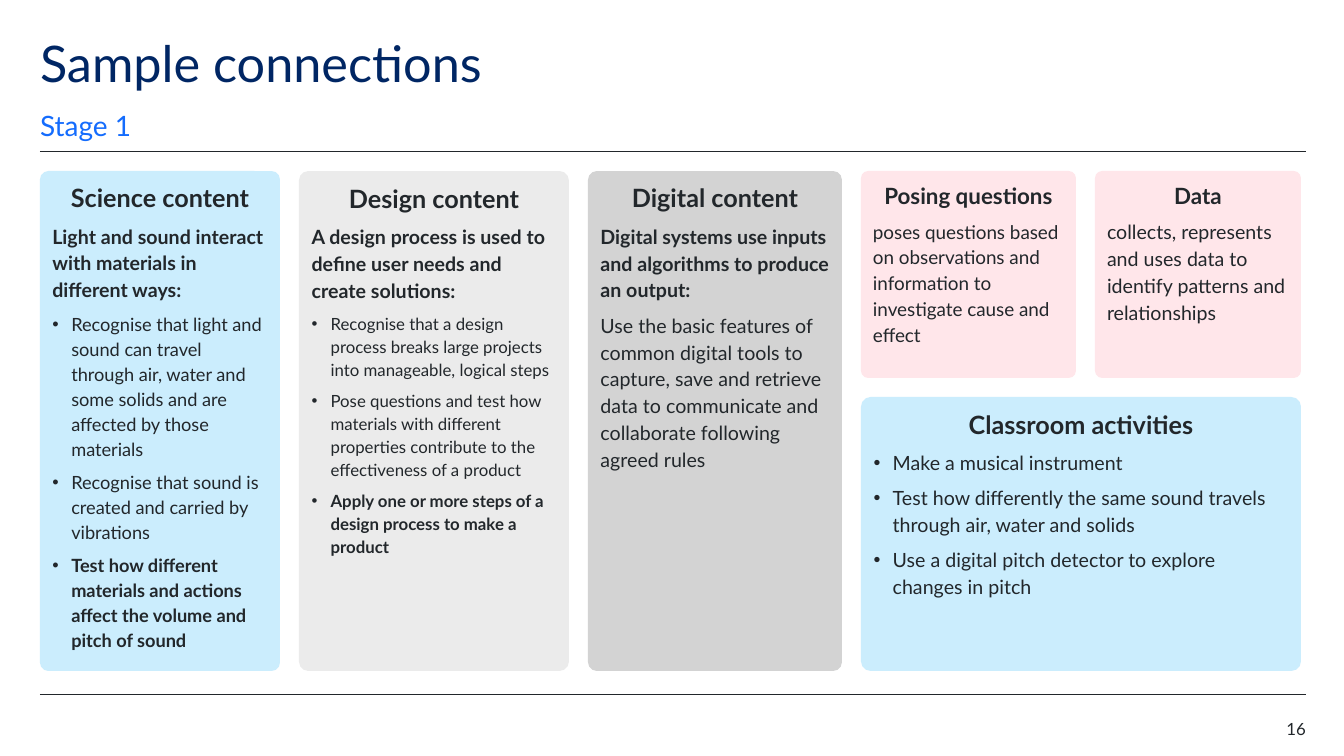
from lxml import etree
from pptx import Presentation
from pptx import util as u
from pptx.dml.color import RGBColor
from pptx.enum import shapes, text
from pptx.oxml.ns import qn

COLOURS = {"navy": "002664", "blue": "146CFD", "ink": "22272B", "sky": "CBEDFD",
           "mist": "EBEBEB", "grey": "D3D3D3", "blush": "FFE6EA"}
FONT = "Lato"
LEFT, RIGHT, TOP, BOTTOM, GAP = 40, 1306, 171, 671, 19
BULLET_INDENT = 19

SCIENCE = [
    ("head", "Science content", 18, True),
    ("plain", "Light and sound interact with materials in different ways:", 14, True),
    ("bullet", "Recognise that light and sound can travel through air, water and "
               "some solids and are affected by those materials", 13, False),
    ("bullet", "Recognise that sound is created and carried by vibrations", 13, False),
    ("bullet", "Test how different materials and actions affect the volume and "
               "pitch of sound", 13, True),
]
DESIGN = [
    ("head", "Design content", 18, True),
    ("plain", "A design process is used to define user needs and create solutions:", 14, True),
    ("bullet", "Recognise that a design process breaks large projects into "
               "manageable, logical steps", 12, False),
    ("bullet", "Pose questions and test how materials with different properties "
               "contribute to the effectiveness of a product", 12, False),
    ("bullet", "Apply one or more steps of a design process to make a product", 12, True),
]
DIGITAL = [
    ("head", "Digital content", 18, True),
    ("plain", "Digital systems use inputs and algorithms to produce an output:", 14, True),
    ("plain", "Use the basic features of common digital tools to capture, save and "
              "retrieve data to communicate and collaborate following agreed rules", 14, False),
]
POSING = [
    ("head", "Posing questions", 16, True),
    ("plain", "poses questions based on observations and information to "
              "investigate cause and effect", 13.5, False),
]
DATA = [
    ("head", "Data", 16, True),
    ("plain", "collects, represents and uses data to identify patterns and "
              "relationships", 14, False),
]
ACTIVITIES = [
    ("head", "Classroom activities", 18, True),
    ("bullet", "Make a musical instrument", 14, False),
    ("bullet", "Test how differently the same sound travels through air, water "
               "and solids", 14, False),
    ("bullet", "Use a digital pitch detector to explore changes in pitch", 14, False),
]


def px(length):
    """Turn pixels into EMU."""
    return u.Emu(round(length * 914400 / 100.8))


def colour(name):
    """Look up a named colour."""
    return RGBColor.from_string(COLOURS[name])


def set_bullet(paragraph, character=None):
    """Give a paragraph a hanging bullet, or none."""
    properties = paragraph._p.get_or_add_pPr()
    indent = px(BULLET_INDENT) if character else 0
    properties.set("marL", str(indent))
    properties.set("indent", str(-indent))
    if character:
        etree.SubElement(properties, qn("a:buFont")).set("typeface", "Arial")
        etree.SubElement(properties, qn("a:buChar")).set("char", character)
    else:
        etree.SubElement(properties, qn("a:buNone"))


def format_paragraph(paragraph, size, tone="ink", bold=False, spacing=1.0, after=0,
                     align=text.PP_ALIGN.LEFT):
    """Set the font and spacing of a paragraph."""
    paragraph.alignment = align
    paragraph.line_spacing = spacing
    paragraph.space_before = u.Pt(0)
    paragraph.space_after = u.Pt(after)
    font = paragraph.font
    font.name, font.size, font.bold = FONT, u.Pt(size), bold
    font.color.rgb = colour(tone)


def fill_label(shape, box, words, anchor=text.MSO_ANCHOR.TOP):
    """Place a one-line text shape without margins and return its paragraph."""
    shape.left, shape.top, shape.width, shape.height = map(px, box)
    frame = shape.text_frame
    frame.margin_left = frame.margin_right = frame.margin_top = frame.margin_bottom = 0
    frame.auto_size = text.MSO_AUTO_SIZE.NONE
    frame.word_wrap = True
    frame.vertical_anchor = anchor
    frame.text = words
    return frame.paragraphs[0]


def add_rule(page, y):
    """Draw a thin line across the content width."""
    line = page.shapes.add_connector(shapes.MSO_CONNECTOR.STRAIGHT,
                                     px(LEFT), px(y), px(RIGHT), px(y))
    line.line.color.rgb = colour("ink")
    line.line.width = u.Pt(0.5)
    etree.SubElement(line._element.spPr, qn("a:effectLst"))


def add_header(page, left, top, width):
    """Fill the title and subtitle placeholders."""
    title = fill_label(page.shapes.title, (left, top, width, 60), "Sample connections")
    format_paragraph(title, 36, "navy", spacing=0.9)
    stage = fill_label(page.placeholders[1], (left, top + 69, width, 34), "Stage 1",
                       text.MSO_ANCHOR.BOTTOM)
    set_bullet(stage)
    format_paragraph(stage, 20, "blue", spacing=1.5, after=12)


def add_card(page, left, top, width, height, tone, rows):
    """Draw a rounded card with a heading, text and bullets."""
    card = page.shapes.add_shape(shapes.MSO_SHAPE.ROUNDED_RECTANGLE,
                                 *map(px, (left, top, width, height)))
    card.adjustments[0] = 0.035
    card.shadow.inherit = False
    card.fill.solid()
    card.fill.fore_color.rgb = colour(tone)
    card.line.fill.background()
    frame = card.text_frame
    frame.word_wrap = True
    frame.vertical_anchor = text.MSO_ANCHOR.TOP
    for index, (style, words, size, bold) in enumerate(rows):
        paragraph = frame.add_paragraph() if index else frame.paragraphs[0]
        paragraph.text = words
        if style == "bullet":
            set_bullet(paragraph, "•")
        align = text.PP_ALIGN.CENTER if style == "head" else text.PP_ALIGN.LEFT
        format_paragraph(paragraph, size, "ink", bold, 1.14, 6, align)


def add_content_columns(page, left, top, height):
    """Lay out the three content cards and return the next free x."""
    for width, tone, rows in ((240, "sky", SCIENCE), (270, "mist", DESIGN),
                              (254, "grey", DIGITAL)):
        add_card(page, left, top, width, height, tone, rows)
        left += width + GAP
    return left


def add_practice(page, left, top, width, height):
    """Lay out two skill cards above the activities card."""
    posing_width, skill_height = 215, 207
    second = posing_width + GAP
    lower = skill_height + GAP
    add_card(page, left, top, posing_width, skill_height, "blush", POSING)
    add_card(page, left + second, top, width - second, skill_height, "blush", DATA)
    add_card(page, left, top + lower, width, height - lower, "sky", ACTIVITIES)


def add_page_number(page, right, top):
    """Write the page number against the right margin."""
    box = page.shapes.add_textbox(0, 0, 0, 0)
    number = fill_label(box, (right - 79, top, 79, 20), "16")
    format_paragraph(number, 12, align=text.PP_ALIGN.RIGHT)


def main():
    """Build and save the deck."""
    deck = Presentation()
    deck.slide_width, deck.slide_height = px(1344), px(756)
    page = deck.slides.add_slide(deck.slide_layouts[1])
    for y in (151, 694):
        add_rule(page, y)
    add_header(page, LEFT, 39, 1111)
    practice_left = add_content_columns(page, LEFT, TOP, BOTTOM - TOP)
    add_practice(page, practice_left, TOP, 440, BOTTOM - TOP)
    add_page_number(page, RIGHT, 719)
    deck.save("out.pptx")


if __name__ == "__main__":
    main()
